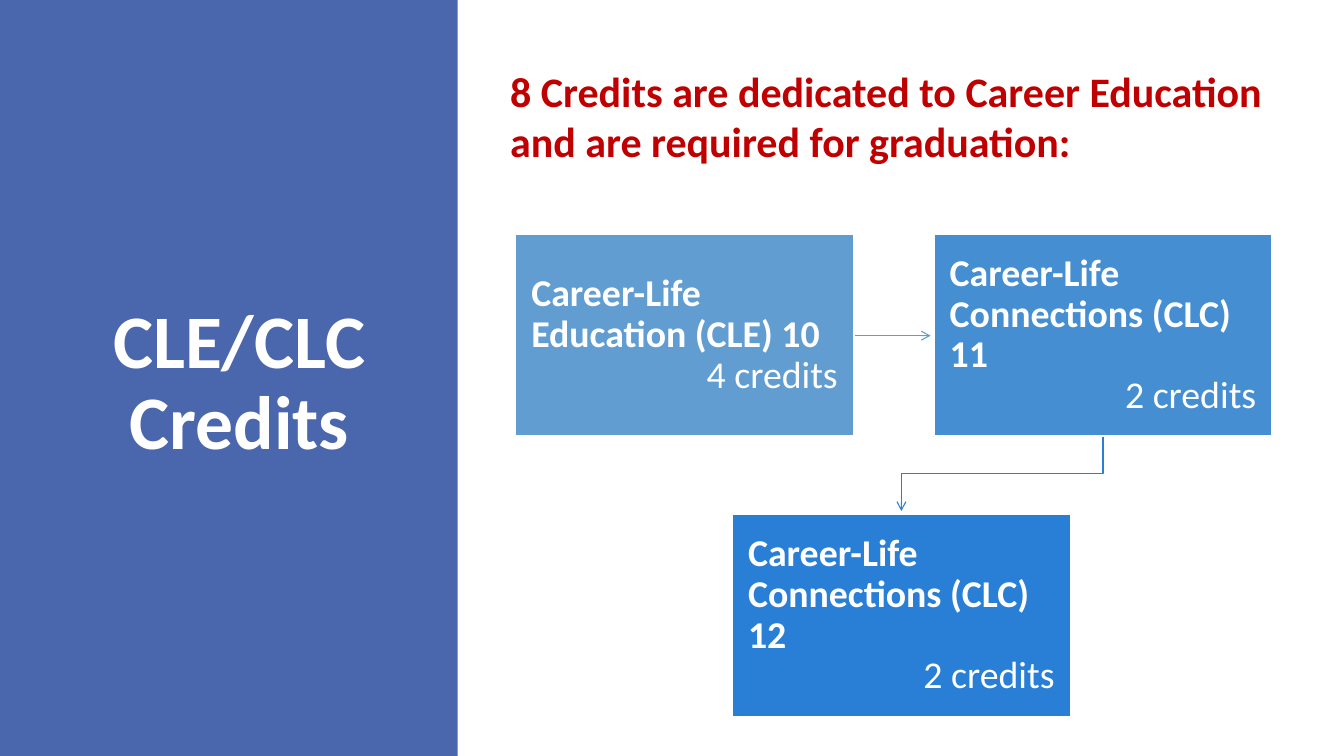
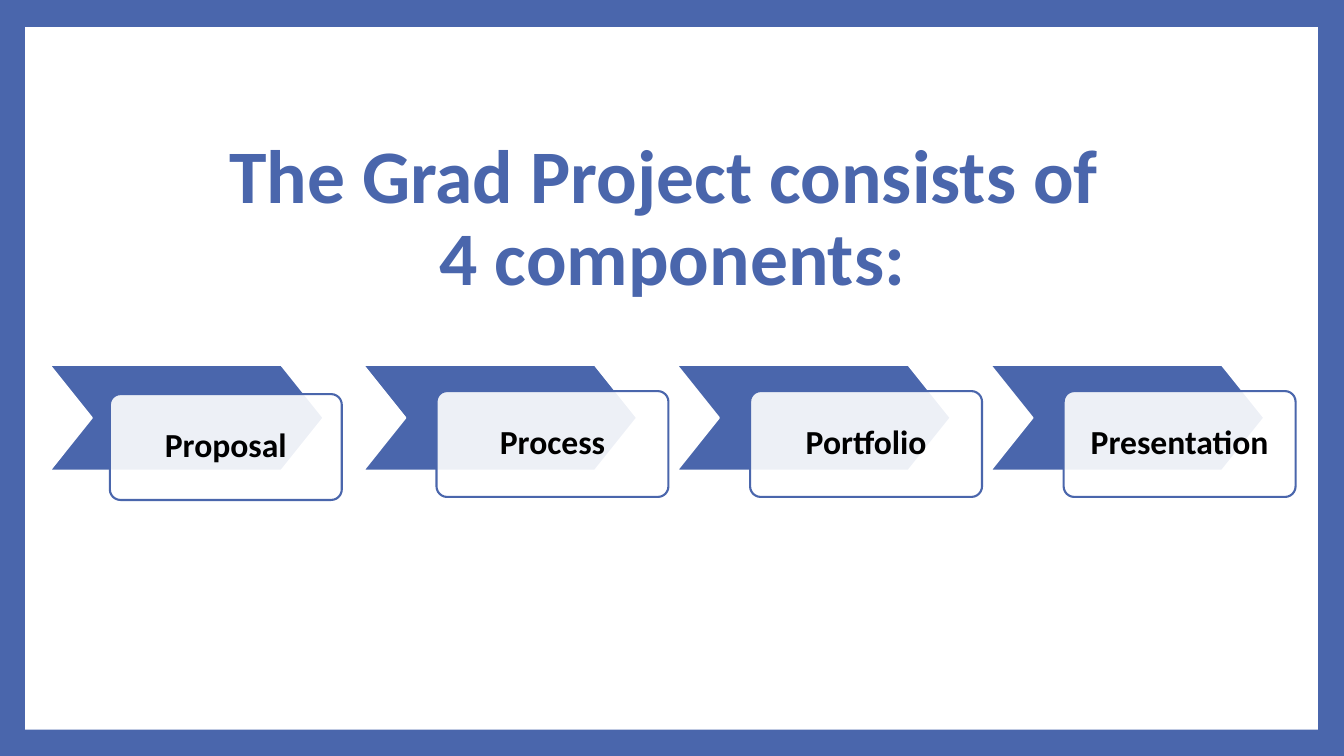
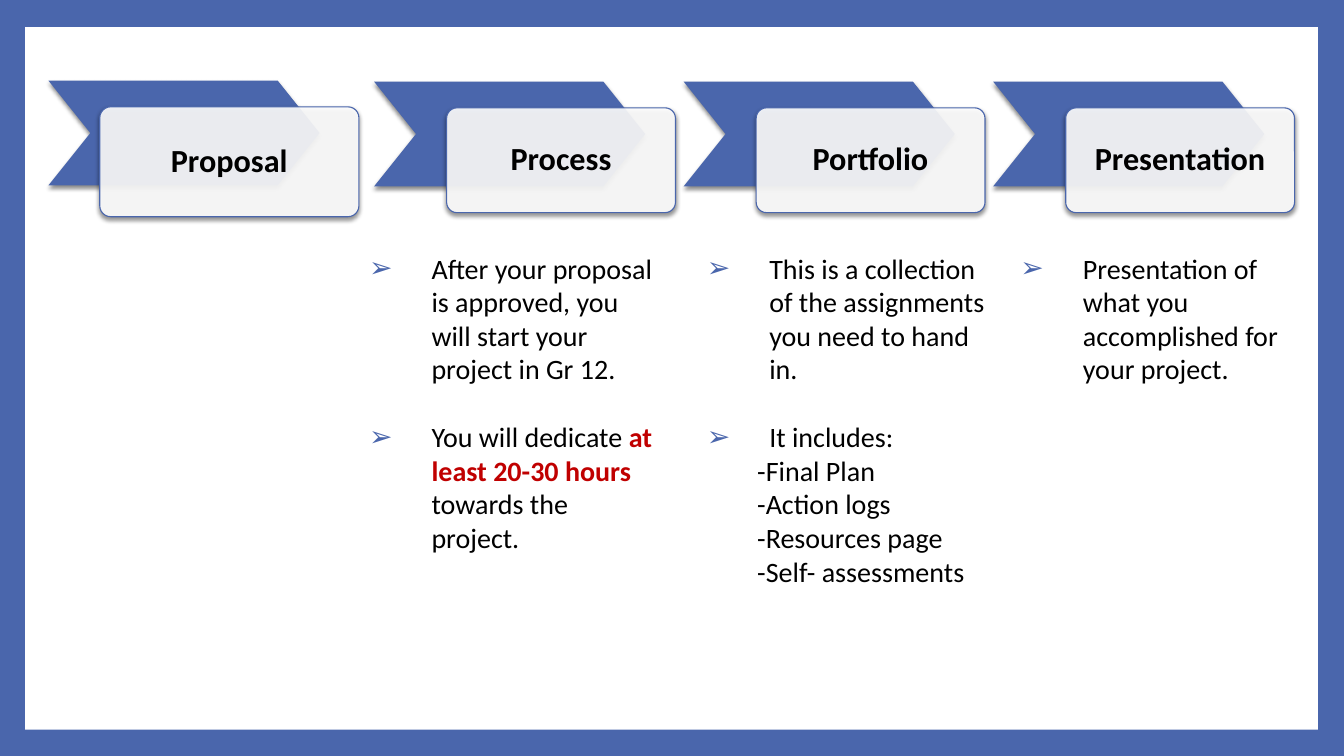
import pptx
import pptx.dml.color
import pptx.enum.shapes
import pptx.enum.text
import pptx.oxml.ns
import pptx.util
from lxml import etree

Inches = pptx.util.Inches
Pt = pptx.util.Pt
RGBColor = pptx.dml.color.RGBColor
Shape = pptx.enum.shapes.MSO_SHAPE
Connector = pptx.enum.shapes.MSO_CONNECTOR
Align = pptx.enum.text.PP_ALIGN
Anchor = pptx.enum.text.MSO_ANCHOR
qn = pptx.oxml.ns.qn

FONT = "Calibri"
BLUE = RGBColor(0x4A, 0x66, 0xAC)
SKY = RGBColor(0x62, 0x9D, 0xD1)
AZURE = RGBColor(0x46, 0x8E, 0xD2)
COBALT = RGBColor(0x29, 0x7F, 0xD5)
RED = RGBColor(0xC0, 0x00, 0x00)
WHITE = RGBColor(0xFF, 0xFF, 0xFF)
BLACK = RGBColor(0x00, 0x00, 0x00)

STEPS = ["Proposal", "Process", "Portfolio", "Presentation"]
HANGING = 0.62


def add_xml(parent, tag, **attributes):
    child = etree.SubElement(parent, qn(tag))
    for name, value in attributes.items():
        child.set(name, str(value))
    return child


def add_text(box, *spans, size=20, color=BLACK, bold=False, align=Align.LEFT,
             line=1.0, before=0, indent=0, bullet=None):
    frame = box.text_frame
    para = frame.add_paragraph() if frame.text else frame.paragraphs[0]
    para.alignment = align
    para.line_spacing = line
    para.space_before = Pt(before)
    properties = para._p.get_or_add_pPr()
    properties.set("marL", str(Inches(indent)))
    properties.set("indent", str(Inches(-indent if bullet else 0)))
    if bullet:
        add_xml(add_xml(properties, "a:buClr"), "a:srgbClr", val=BLUE)
        add_xml(properties, "a:buChar", char=bullet)
    else:
        add_xml(properties, "a:buNone")
    for span in spans:
        if span == "\v":
            para.add_line_break()
            continue
        words, span_color, span_bold = (span, color, bold) if isinstance(span, str) else span
        run = para.add_run()
        run.text = words
        run.font.name = FONT
        run.font.size = Pt(size)
        run.font.bold = span_bold
        run.font.color.rgb = span_color


def place(box, left, top, width, height, anchor=Anchor.TOP):
    box.left, box.top = Inches(left), Inches(top)
    box.width, box.height = Inches(width), Inches(height)
    frame = box.text_frame
    frame.word_wrap = True
    frame.auto_size = pptx.enum.text.MSO_AUTO_SIZE.NONE
    frame.vertical_anchor = anchor
    return box


def add_title(page, *spans, at, color):
    title = place(page.shapes.title, *at, anchor=Anchor.MIDDLE)
    add_text(title, *spans, size=54, color=color, bold=True, align=Align.CENTER, line=0.9)


def add_block(page, kind, at, fill, outline=None, weight=1.5, adjust=None,
              opacity=100, shadow=False, inset=(0.1, 0.05)):
    block = page.shapes.add_shape(kind, *map(Inches, at))
    block.fill.solid()
    block.fill.fore_color.rgb = fill
    if opacity < 100:
        color = block.element.spPr.find(".//" + qn("a:srgbClr"))
        add_xml(color, "a:alpha", val=opacity * 1000)
    if outline is None:
        block.line.fill.background()
    else:
        block.line.color.rgb = outline
        block.line.width = Pt(weight)
    if adjust is not None:
        block.adjustments[0] = adjust
    block.shadow.inherit = False
    if shadow:
        effects = block.element.spPr.find(qn("a:effectLst"))
        outer = add_xml(effects, "a:outerShdw", blurRad=Pt(3), dist=Pt(2),
                        dir=5400000, algn="ctr", rotWithShape=0)
        add_xml(add_xml(outer, "a:srgbClr", val=BLACK), "a:alpha", val=45000)
    frame = block.text_frame
    frame.word_wrap = True
    frame.vertical_anchor = Anchor.MIDDLE
    frame.margin_left = frame.margin_right = Inches(inset[0])
    frame.margin_top = frame.margin_bottom = Inches(inset[1])
    return block


def add_arrow(page, kind, start, end, color, rotation=0):
    arrow = page.shapes.add_connector(kind, *map(Inches, start + end))
    arrow.rotation = rotation
    arrow.line.color.rgb = color
    arrow.line.width = Pt(0.79)
    properties = arrow.element.spPr
    add_xml(properties.get_or_add_ln(), "a:tailEnd", type="arrow")
    add_xml(properties, "a:effectLst")


def add_course(page, left, top, fill, name, credits):
    course = add_block(page, Shape.RECTANGLE, (left, top, 3.36, 2.01), fill,
                       outline=WHITE, inset=(0.16, 0.17))
    add_text(course, name, size=27, color=WHITE, bold=True, line=0.9)
    add_text(course, credits, size=27, color=WHITE, align=Align.RIGHT, line=0.9)


def add_step(page, name, chevron_at, label_at, size, weight, outline=None, shadow=False):
    add_block(page, Shape.CHEVRON, chevron_at, BLUE, outline=outline, adjust=0.4, shadow=shadow)
    label = add_block(page, Shape.ROUNDED_RECTANGLE, label_at, WHITE, outline=BLUE,
                      weight=weight, adjust=0.1, opacity=90, shadow=shadow, inset=(0.2, 0.2))
    add_text(label, name, size=size, bold=True, align=Align.CENTER, line=0.9)


def add_page(deck, layout):
    return deck.slides.add_slide(deck.slide_layouts.get_by_name(layout))


def frame_master(deck, page):
    master = deck.slide_master
    master.background.fill.solid()
    master.background.fill.fore_color.rgb = BLUE
    panel = add_block(page, Shape.RECTANGLE, (0.25, 0.27, 12.82, 6.97), WHITE)
    master.shapes.element.insert(2, panel.element)


def build_credits(deck):
    page = add_page(deck, "Title and Content")
    frame_master(deck, page)
    for left, width, fill in ((0, 13.33, WHITE), (0, 4.54, BLUE)):
        band = add_block(page, Shape.RECTANGLE, (left, 0, width, 7.5), fill)
        page.shapes.element.insert(2 if fill == WHITE else 3, band.element)
    add_title(page, "CLE/CLC Credits", at=(0.57, 0.96, 3.61, 5.71), color=WHITE)
    intro = place(page.placeholders[1], 4.96, 0.6, 7.96, 1.11)
    add_text(intro, "8 Credits are dedicated to Career Education and are required for graduation:",
             size=30, color=RED, bold=True)
    add_arrow(page, Connector.STRAIGHT, (8.48, 3.33), (9.23, 3.33), SKY)
    add_arrow(page, Connector.ELBOW, (9.57, 3.7), (10.31, 5.7), COBALT, rotation=90)
    add_course(page, 5.11, 2.32, SKY, "Career-Life Education (CLE) 10", "4 credits")
    add_course(page, 9.26, 2.32, AZURE, "Career-Life Connections (CLC) 11", "2 credits")
    add_course(page, 7.26, 5.1, COBALT, "Career-Life Connections (CLC) 12", "2 credits")


def build_components(deck):
    page = add_page(deck, "Title Only")
    add_title(page, "The Grad Project consists of ", "\v", "4 components:",
              at=(1.27, 1.62, 10.8, 1.12), color=BLUE)
    for index, name in enumerate(STEPS):
        left = 0.49 + 3.11 * index
        label_left, label_top = (left + 0.73, 3.88) if index else (1.09, 3.91)
        add_step(page, name, (left, 3.62, 2.72, 1.05), (label_left, label_top, 2.3, 1.05),
                 size=24, weight=1.5, outline=WHITE)


def build_details(deck):
    page = add_page(deck, "Comparison")
    for index, name in enumerate(STEPS):
        left = 3.71 + 3.07 * (index - 1)
        chevron_at, label_at = (left, 0.81, 2.69, 1.04), (left + 0.72, 1.07, 2.27, 1.04)
        if index == 0:
            chevron_at, label_at = (0.48, 0.8, 2.69, 1.04), (0.99, 1.06, 2.57, 1.09)
        add_step(page, name, chevron_at, label_at, size=23, weight=0.79, shadow=True)

    point = {"indent": HANGING, "bullet": "➢"}
    process = place(page.placeholders[1], 3.56, 2.44, 3.08, 3.26)
    add_text(process, "After your proposal is approved, you will start your project in Gr 12.", **point)
    add_text(process, "You will dedicate ", ("at least 20-30 hours ", RED, True),
             "towards the project.", before=24.4, **point)

    portfolio = place(page.placeholders[2], 6.91, 2.44, 3.1, 3.84)
    add_text(portfolio, "This is a collection of the assignments you need to hand in.", **point)
    add_text(portfolio, "It includes:", before=24.4, **point)
    for item in ("-Final Plan", "-Action logs", "-Resources page", "-Self- assessments"):
        add_text(portfolio, item, indent=0.5)

    presentation = place(page.placeholders[3], 10.02, 2.44, 3.1, 1.82)
    add_text(presentation, "Presentation of what you accomplished for your project.", **point)

    for unused in (page.placeholders[0], page.placeholders[4]):
        unused.element.getparent().remove(unused.element)


def main():
    deck = pptx.Presentation()
    deck.slide_width, deck.slide_height = Inches(13.33), Inches(7.5)
    build_credits(deck)
    build_components(deck)
    build_details(deck)
    deck.save("out.pptx")


if __name__ == "__main__":
    main()
